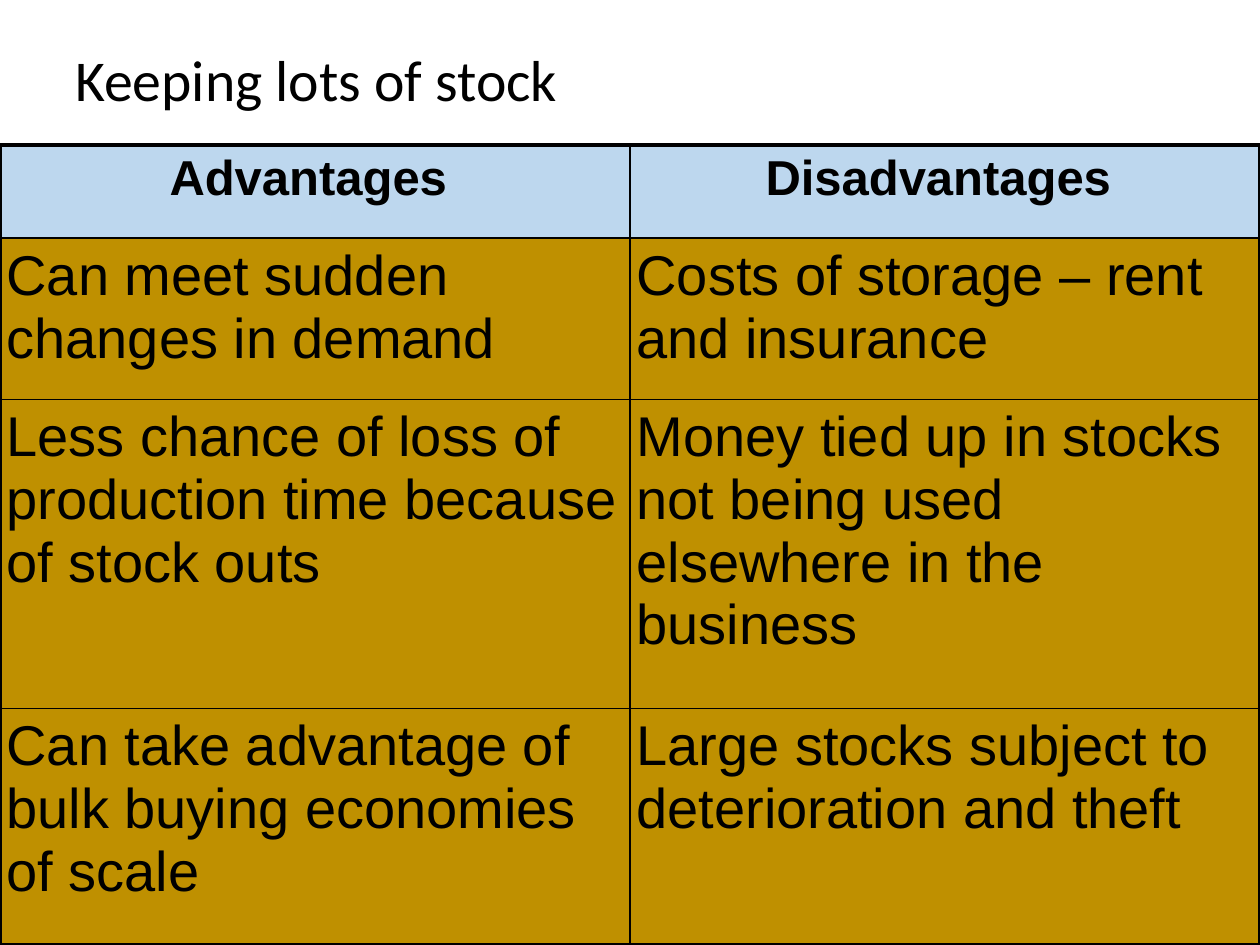
from lxml import etree
from pptx import Presentation
from pptx.dml.color import RGBColor
from pptx.enum import text
from pptx.oxml.ns import qn
from pptx.util import Cm, Pt

BLACK = RGBColor(0x00, 0x00, 0x00)
PALE_BLUE = RGBColor(0xBD, 0xD7, 0xEE)
GOLD = RGBColor(0xBF, 0x90, 0x00)

WIDTH, HEIGHT = Cm(25.4), Cm(19.05)
TABLE_TOP = Cm(2.92)
ROW_HEIGHTS = [Cm(1.88), Cm(3.25), Cm(6.23), Cm(4.75)]
CELL_MARGIN = Cm(0.13)
THICK, THIN = Pt(2.25), Pt(1)

POINTS = [
    ("Advantages ", "Disadvantages "),
    ("Can meet sudden changes in demand",
     "Costs of storage – rent and insurance"),
    ("Less chance of loss of production time because of stock outs",
     "Money tied up in stocks not being used elsewhere in the business"),
    ("Can take advantage of bulk buying economies of scale",
     "Large stocks subject to deterioration and theft"),
]


def write(frame, words, size, font="Arial", bold=False,
          align=text.PP_ALIGN.LEFT, spacing=None):
    paragraph = frame.paragraphs[0]
    paragraph.alignment = align
    paragraph.line_spacing = spacing
    run = paragraph.add_run()
    run.text = words
    run.font.size = Pt(size)
    run.font.name = font
    run.font.bold = bold
    run.font.color.rgb = BLACK


def set_borders(cell, widths):
    """Draw the left, right, top and bottom lines, in that order."""
    properties = cell._tc.get_or_add_tcPr()
    for index, (side, width) in enumerate(zip("LRTB", widths)):
        line = etree.Element(qn(f"a:ln{side}"), w=str(width))
        fill = etree.SubElement(line, qn("a:solidFill"))
        etree.SubElement(fill, qn("a:srgbClr"), val=str(BLACK))
        properties.insert(index, line)


def add_title(slide, left, top, width, height):
    frame = slide.shapes.add_textbox(left, top, width, height).text_frame
    frame.word_wrap = True
    frame.vertical_anchor = text.MSO_ANCHOR.MIDDLE
    write(frame, "Keeping lots of stock", 33, font="Calibri", spacing=0.9)


def add_comparison(slide, left, top, width, height):
    table = slide.shapes.add_table(
        len(POINTS), 2, left, top, width, height).table
    table.first_row = table.horz_banding = False
    for column in table.columns:
        column.width = width // 2
    for r, (row, pair) in enumerate(zip(table.rows, POINTS)):
        row.height = ROW_HEIGHTS[r]
        header = r == 0
        for c, words in enumerate(pair):
            cell = row.cells[c]
            cell.margin_left = cell.margin_right = CELL_MARGIN
            cell.margin_top = cell.margin_bottom = CELL_MARGIN
            cell.fill.solid()
            cell.fill.fore_color.rgb = PALE_BLUE if header else GOLD
            set_borders(cell, [THICK if c == 0 else THIN,
                               THICK if c == 1 else THIN,
                               THICK if header else THIN,
                               THIN])
            if header:
                write(cell.text_frame, words, 28, bold=True,
                      align=text.PP_ALIGN.CENTER)
            else:
                write(cell.text_frame, words, 32)


def main():
    deck = Presentation()
    deck.slide_width, deck.slide_height = WIDTH, HEIGHT
    slide = deck.slides.add_slide(deck.slide_layouts[6])
    add_title(slide, Cm(1.27), Cm(0.43), Cm(22.86), Cm(2.49))
    add_comparison(slide, 0, TABLE_TOP, WIDTH, sum(ROW_HEIGHTS))
    deck.save("out.pptx")


if __name__ == "__main__":
    main()
